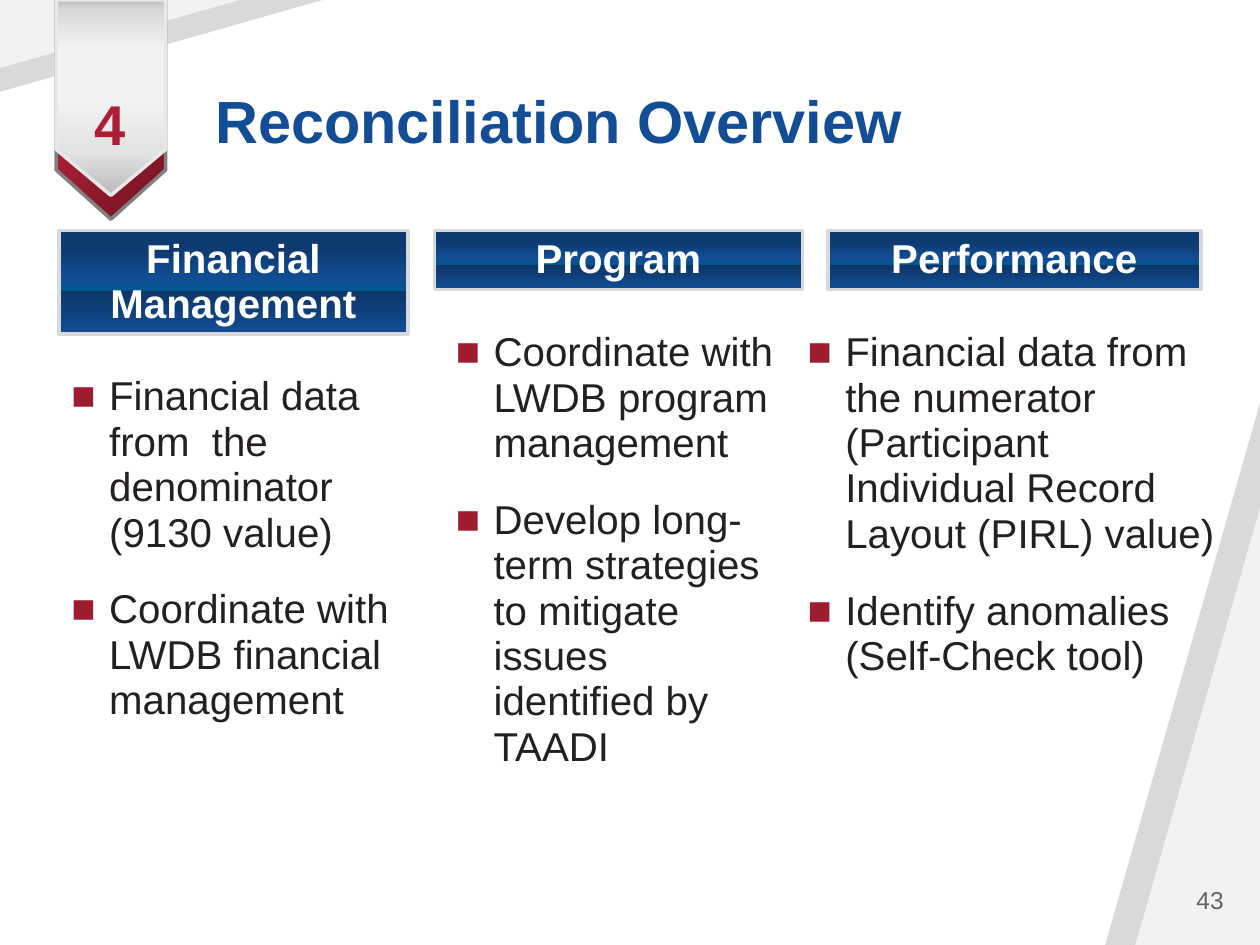
from collections import namedtuple
from dataclasses import dataclass

from lxml import etree
from pptx import Presentation
from pptx.dml.color import RGBColor
from pptx.enum.shapes import MSO_SHAPE as Shape
from pptx.enum.text import MSO_ANCHOR as Anchor, MSO_AUTO_SIZE as AutoSize, PP_ALIGN as Align
from pptx.oxml.ns import qn
from pptx.util import Cm, Pt

Box = namedtuple("Box", "x y w h")  # centimetres


@dataclass(frozen=True)
class Theme:
    font: str = "Arial"
    blue: str = "124D95"
    red: str = "AC1E34"
    bullet: str = "9E1C30"
    text: str = "242021"
    white: str = "FFFFFF"
    number: str = "646464"
    band: str = "D9D9D9"
    band_light: str = "F2F2F2"
    tip_line: str = "808080"
    ribbon_line: str = "E8E8E8"
    header_stops: tuple = ((19, "0D3A70"), (47, "124D95"), (58, "00588F"),
                           (59, "0D3668"), (100, "124D95"))
    tip_stops: tuple = ((0, "6A1320"), (48, "A61D33"), (100, "E25A6F"))
    ribbon_stops: tuple = ((0, "BFBFBF"), (6, "D9D9D9"), (25, "F2F2F2"),
                           (53, "F1F1F1"), (77, "E3E3E3"), (97, "BFBFBF"))
    title_size: int = 34
    section_size: int = 40
    body_size: int = 23
    number_size: int = 14
    line_spacing: float = 0.94


T = Theme()


# Shared helpers
def place(sp, box):
    sp.left, sp.top, sp.width, sp.height = (Cm(v) for v in box)


def add_shape(slide, kind, box, fill=None, line=None):
    sp = slide.shapes.add_shape(kind, *(Cm(v) for v in box))
    sp.shadow.inherit = False
    sp.fill.solid()
    if fill:
        sp.fill.fore_color.rgb = RGBColor.from_string(fill)
    if line:
        sp.line.color.rgb = RGBColor.from_string(line)
        sp.line.width = Pt(2)
    else:
        sp.line.fill.background()
    return sp


def set_gradient(sp, stops, angle=None):
    """Linear at the given angle, or radial from the far corner without one."""
    grad = etree.Element(qn("a:gradFill"), rotWithShape="1")
    gs_list = etree.SubElement(grad, qn("a:gsLst"))
    for pos, color in stops:
        gs = etree.SubElement(gs_list, qn("a:gs"), pos=str(pos * 1000))
        etree.SubElement(gs, qn("a:srgbClr"), val=color)
    if angle is None:
        path = etree.SubElement(grad, qn("a:path"), path="circle")
        etree.SubElement(path, qn("a:fillToRect"), l="100000", t="100000")
    else:
        etree.SubElement(grad, qn("a:lin"), ang=str(angle * 60000), scaled="0")
    sp_pr = sp._element.spPr
    sp_pr.replace(sp_pr.find(qn("a:solidFill")), grad)


def set_frame(sp, anchor, margins=(0.25, 0.13, 0.25, 0.13)):
    tf = sp.text_frame
    tf.word_wrap = True
    tf.auto_size = AutoSize.NONE
    tf.vertical_anchor = anchor
    tf.margin_left, tf.margin_top, tf.margin_right, tf.margin_bottom = (Cm(m) for m in margins)
    return tf


def format_paragraph(p, size, color, bold=False, align=Align.LEFT, before=0):
    p.alignment = align
    p.line_spacing = T.line_spacing
    p.space_before = Pt(before)
    for r in p.runs:
        r.font.name = T.font
        r.font.size = Pt(size)
        r.font.bold = bold
        r.font.color.rgb = RGBColor.from_string(color)


def add_bullet(p):
    p_pr = p._p.get_or_add_pPr()
    p_pr.set("marL", str(Cm(0.76)))
    p_pr.set("indent", str(-Cm(0.76)))
    color = etree.SubElement(p_pr, qn("a:buClr"))
    etree.SubElement(color, qn("a:srgbClr"), val=T.bullet)
    etree.SubElement(p_pr, qn("a:buFont"), typeface=T.font)
    etree.SubElement(p_pr, qn("a:buChar"), char="■")


# Regions
def corner_bands(slide, outer, inner, rotation=0):
    for box, color in ((outer, T.band), (inner, T.band_light)):
        sp = add_shape(slide, Shape.ISOSCELES_TRIANGLE, box, color)
        sp.adjustments[0] = 1
        sp.rotation = rotation


def pennant(slide, box, adj, line):
    """A pentagon arrow pointing down that fills the upright box."""
    dx = (box.h - box.w) / 2
    sp = add_shape(slide, Shape.PENTAGON, Box(box.x - dx, box.y + dx, box.h, box.w), line=line)
    sp.rotation = 90
    sp.adjustments[0] = adj
    return sp


def section_ribbon(slide, box, ph, number):
    tip = pennant(slide, box, 0.45, T.tip_line)
    set_gradient(tip, T.tip_stops)
    ribbon = pennant(slide, box._replace(h=box.h - 0.48), 0.42, T.ribbon_line)
    set_gradient(ribbon, T.ribbon_stops, 0)

    slide.shapes._spTree.append(ph._element)  # number in front of the ribbon
    place(ph, Box(box.x - 0.19, box.y + 1.47, 2.57, 2.24))
    tf = set_frame(ph, Anchor.TOP, (0.25, 0.2, 0.25, 0.13))
    tf.text = number
    p = tf.paragraphs[0]
    p._p.get_or_add_pPr().set("marL", "0")
    p._p.get_or_add_pPr().set("indent", "0")
    etree.SubElement(p._p.get_or_add_pPr(), qn("a:buNone"))
    format_paragraph(p, T.section_size, T.red, True, Align.CENTER)
    p.runs[0].font._element.set("cap", "small")


def title(slide, box, text):
    sp = slide.shapes.title
    place(sp, box)
    tf = set_frame(sp, Anchor.MIDDLE)
    tf.text = text
    format_paragraph(tf.paragraphs[0], T.title_size, T.blue, True)


def column(slide, box, header_h, heading, ph, list_dx, list_w, items):
    # Header bar
    sp = add_shape(slide, Shape.RECTANGLE, box._replace(h=header_h), line=T.band)
    set_gradient(sp, T.header_stops, 90)
    tf = set_frame(sp, Anchor.MIDDLE, (0.13, 0.15, 0.13, 0.15))
    tf.text = heading
    format_paragraph(tf.paragraphs[0], T.body_size, T.white, True, Align.CENTER)

    # Bulleted list
    list_dy = header_h + 0.69
    place(ph, Box(box.x + list_dx, box.y + list_dy, list_w, box.h - list_dy))
    tf = set_frame(ph, Anchor.TOP)
    tf.text = "\n".join(items)
    for i, p in enumerate(tf.paragraphs):
        add_bullet(p)
        format_paragraph(p, T.body_size, T.text, before=18 if i else 0)


def page_number(slide, box, text):
    tf = set_frame(slide.shapes.add_textbox(*(Cm(v) for v in box)), Anchor.MIDDLE)
    tf.text = text
    format_paragraph(tf.paragraphs[0], T.number_size, T.number, align=Align.RIGHT)


def main():
    prs = Presentation()
    prs.slide_width, prs.slide_height = Cm(25.4), Cm(19.05)
    slide = prs.slides.add_slide(prs.slide_layouts[4])
    section, *lists = [ph for ph in slide.placeholders if ph.placeholder_format.idx in range(1, 5)]

    corner_bands(slide, Box(22.28, 8.13, 3.12, 10.92), Box(22.89, 10.24, 2.51, 8.81))
    corner_bands(slide, Box(0, 0, 6.5, 1.85), Box(0, 0, 4.83, 1.37), 180)
    section_ribbon(slide, Box(1.13, 0, 2.21, 4.42), section, "4")
    title(slide, Box(4.09, 1.02, 19.76, 2.92), "Reconciliation Overview")

    top, height = 4.65, 12.55
    columns = (
        (1.19, 7.04, 2.08, "Financial Management", 0, 7.04,
         ("Financial data from  the denominator (9130 value)",
          "Coordinate with LWDB financial management")),
        (8.76, 7.42, 1.19, "Program", 0.18, 7.04,
         ("Coordinate with LWDB program management",
          "Develop long-term strategies to mitigate issues identified by TAADI")),
        (16.69, 7.52, 1.19, "Performance", -0.66, 8.81,
         ("Financial data from the numerator (Participant Individual Record Layout (PIRL) value)",
          "Identify anomalies (Self-Check tool)")),
    )
    for ph, (x, w, header_h, heading, list_dx, list_w, items) in zip(lists, columns):
        column(slide, Box(x, top, w, height), header_h, heading, ph, list_dx, list_w, items)

    page_number(slide, Box(21.36, 17.65, 3.56, 1.02), "43")
    prs.save("out.pptx")


if __name__ == "__main__":
    main()
